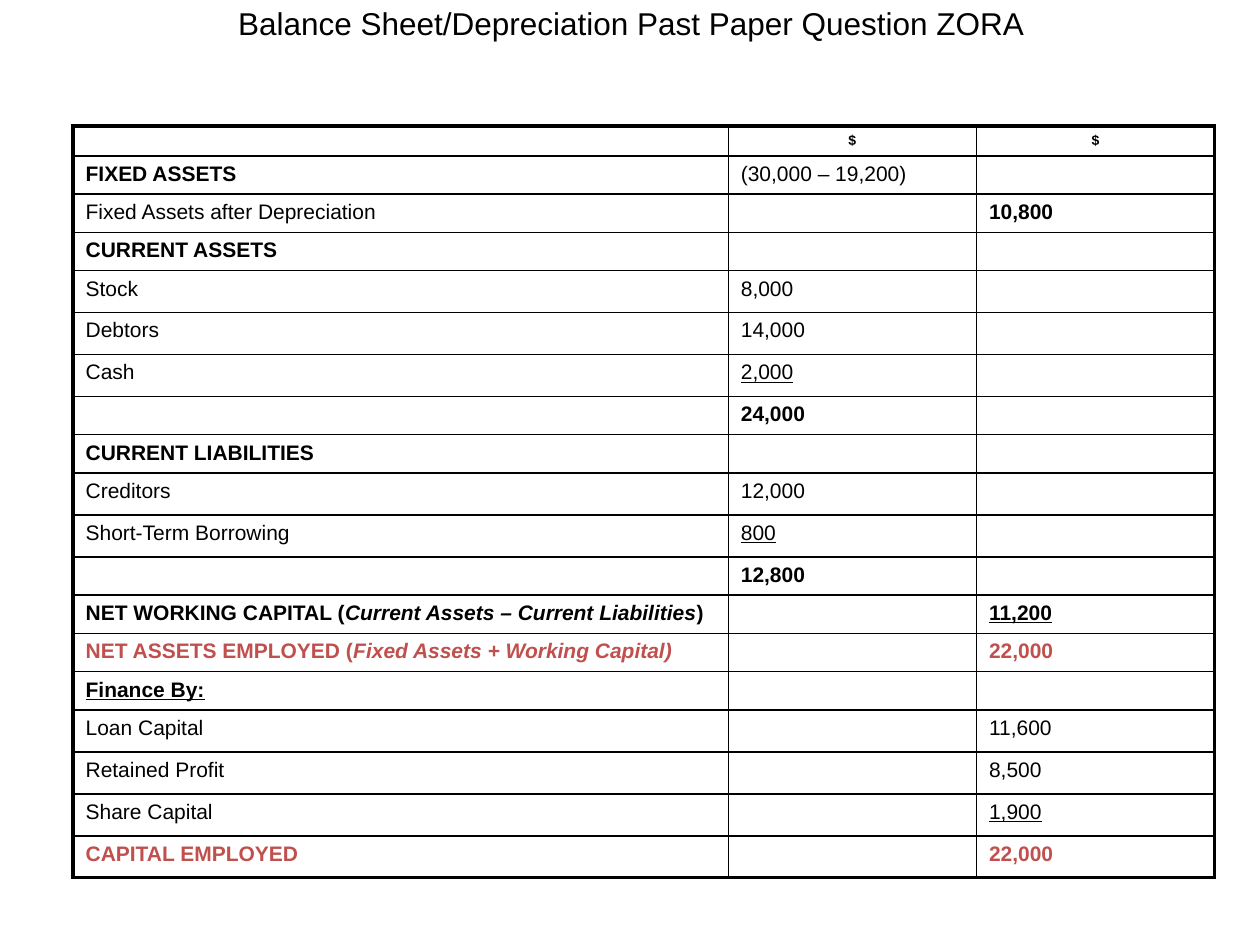
import typing

import lxml.etree
import pptx
import pptx.dml.color
import pptx.enum.text
import pptx.oxml.ns
import pptx.util

Inches = pptx.util.Inches
Pt = pptx.util.Pt
Align = pptx.enum.text.PP_ALIGN
qn = pptx.oxml.ns.qn

BLACK = pptx.dml.color.RGBColor(0x00, 0x00, 0x00)
RED = pptx.dml.color.RGBColor(0xC0, 0x50, 0x4D)
FONT = "Arial"
THIN, THICK = 1, 2.25
SHORT, TALL = 0.3, 1 / 3
WIDTHS = (5.2, 1.97, 1.89)


class Run(typing.NamedTuple):
    text: str
    bold: bool = False
    italic: bool = False
    under: bool = False


class Row(typing.NamedTuple):
    cells: tuple[tuple[Run, ...], ...]
    height: float = SHORT
    color: pptx.dml.color.RGBColor = BLACK
    size: float = 12
    align: typing.Any = Align.LEFT


def plain(text: str) -> tuple[Run, ...]:
    return (Run(text),)


def bold(text: str) -> tuple[Run, ...]:
    return (Run(text, bold=True),)


def under(text: str, heavy: bool = False) -> tuple[Run, ...]:
    return (Run(text, bold=heavy, under=True),)


def note(head: str, text: str, tail: str = "") -> tuple[Run, ...]:
    runs = (Run(head, bold=True), Run(text, bold=True, italic=True))
    return runs + bold(tail) if tail else runs


NONE = ()
ROWS = (
    Row((NONE, bold("$"), bold("$")), 0.23, size=8, align=Align.CENTER),
    Row((bold("FIXED ASSETS"), plain("(30,000 – 19,200)"), NONE)),
    Row((plain("Fixed Assets after Depreciation"), NONE, bold("10,800"))),
    Row((bold("CURRENT ASSETS"), NONE, NONE)),
    Row((plain("Stock"), plain("8,000"), NONE), TALL),
    Row((plain("Debtors"), plain("14,000"), NONE), TALL),
    Row((plain("Cash"), under("2,000"), NONE), TALL),
    Row((NONE, bold("24,000"), NONE)),
    Row((bold("CURRENT LIABILITIES"), NONE, NONE)),
    Row((plain("Creditors"), plain("12,000"), NONE), TALL),
    Row((plain("Short-Term Borrowing"), under("800"), NONE), TALL),
    Row((NONE, bold("12,800"), NONE)),
    Row((note("NET WORKING CAPITAL (", "Current Assets – Current Liabilities", ")"),
         NONE, under("11,200", True))),
    Row((note("NET ASSETS EMPLOYED (", "Fixed Assets + Working Capital)"),
         NONE, bold("22,000")), color=RED),
    Row((under("Finance By:", True), NONE, NONE)),
    Row((plain("Loan Capital"), NONE, plain("11,600")), TALL),
    Row((plain("Retained Profit"), NONE, plain("8,500")), TALL),
    Row((plain("Share Capital"), NONE, under("1,900")), TALL),
    Row((bold("CAPITAL EMPLOYED"), NONE, bold("22,000")), TALL, RED),
)


def write(frame, runs: tuple[Run, ...], *, size: float, color=BLACK,
          align=Align.LEFT) -> None:
    para = frame.paragraphs[0]
    para.alignment = align
    for item in runs:
        run = para.add_run()
        run.text = item.text
        font = run.font
        font.name, font.size = FONT, Pt(size)
        font.bold, font.italic, font.underline = item.bold, item.italic, item.under
        font.color.rgb = color
    if not runs:
        # An empty cell keeps the text size of its row
        end = lxml.etree.SubElement(para._p, qn("a:endParaRPr"))
        end.set("sz", str(size * 100))


def border(cell, sides: dict[str, float]) -> None:
    props = cell._tc.get_or_add_tcPr()
    for spot, (side, width) in enumerate(sides.items()):
        line = lxml.etree.Element(qn(f"a:ln{side}"), w=str(Pt(width)))
        fill = lxml.etree.SubElement(line, qn("a:solidFill"))
        lxml.etree.SubElement(fill, qn("a:srgbClr"), val=str(BLACK))
        props.insert(spot, line)


def sheet(slide) -> None:
    high = sum(row.height for row in ROWS)
    table = slide.shapes.add_table(
        len(ROWS), len(WIDTHS), Inches(0.58), Inches(1),
        Inches(sum(WIDTHS)), Inches(high)).table
    table.first_row = table.horz_banding = False
    for col, width in zip(table.columns, WIDTHS):
        col.width = Inches(width)
    last, end = len(ROWS) - 1, len(WIDTHS) - 1
    for r, row in enumerate(ROWS):
        table.rows[r].height = Inches(row.height)
        for c, runs in enumerate(row.cells):
            cell = table.cell(r, c)
            cell.fill.background()
            write(cell.text_frame, runs, size=row.size, color=row.color,
                  align=row.align)
            # Thick lines only around the outside
            edges = {"L": c == 0, "R": c == end, "T": r == 0, "B": r == last}
            border(cell, {s: THICK if out else THIN for s, out in edges.items()})


def main() -> None:
    deck = pptx.Presentation()
    deck.slide_width, deck.slide_height = Inches(10), Inches(7.5)
    slide = deck.slides.add_slide(deck.slide_layouts[5])

    # Title
    title = slide.shapes.title
    title.left, title.top = Inches(0.51), Inches(0)
    title.width, title.height = Inches(9), Inches(0.36)
    title.text_frame.vertical_anchor = pptx.enum.text.MSO_ANCHOR.MIDDLE
    write(title.text_frame,
          plain("Balance Sheet/Depreciation Past Paper Question ZORA"),
          size=18, align=Align.CENTER)

    # Balance sheet
    sheet(slide)
    deck.save("out.pptx")


if __name__ == "__main__":
    main()
